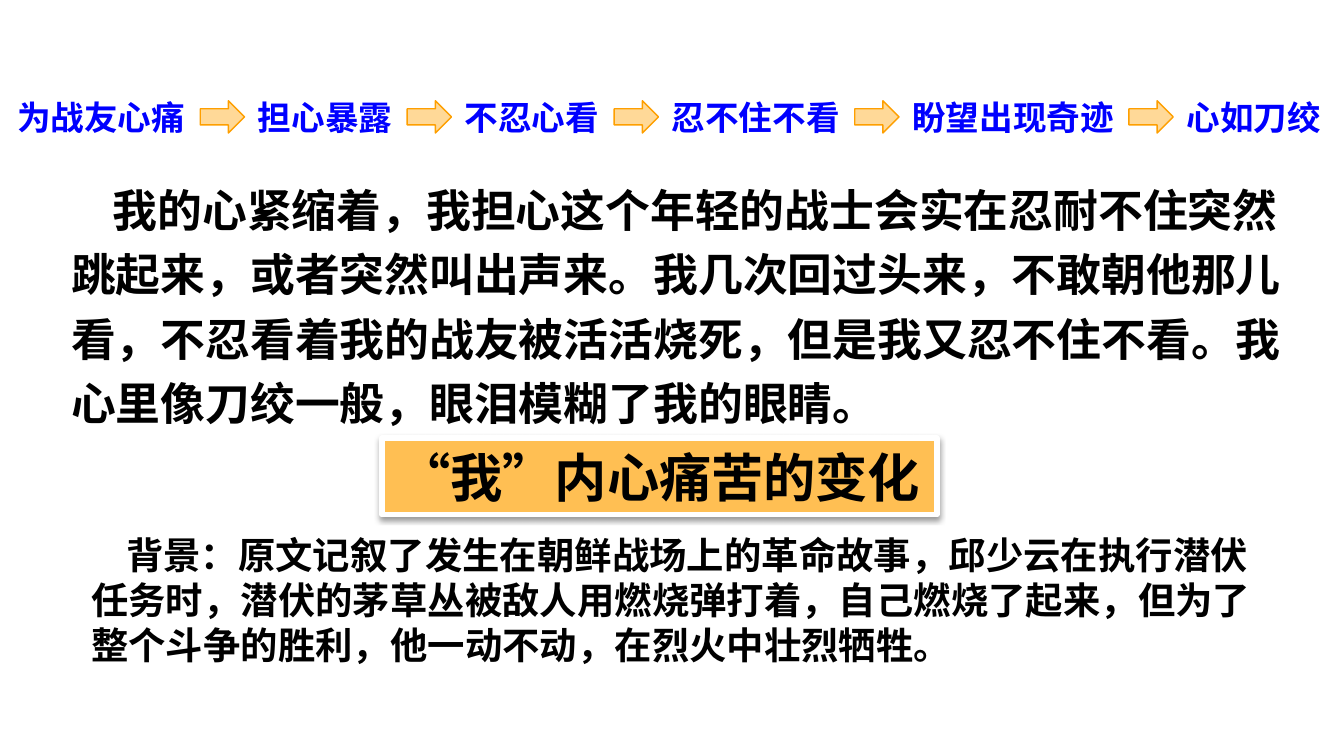
from lxml.etree import SubElement
from pptx import Presentation
from pptx.dml.color import RGBColor
from pptx.enum.lang import MSO_LANGUAGE_ID as Language
from pptx.enum.shapes import MSO_SHAPE as Shape
from pptx.enum.text import MSO_ANCHOR as Anchor, MSO_AUTO_SIZE as AutoSize, PP_ALIGN as Align
from pptx.oxml.ns import qn
from pptx.util import Inches, Pt

FONT = "Noto Sans CJK SC"
BLACK, BLUE, WHITE = "000000", "0000FF", "FFFFFF"
ARROW_FILL, ARROW_LINE, BANNER_FILL = "FFD998", "FE9F00", "FFBF53"

STAGES = ["为战友心痛", "担心暴露", "不忍心看", "忍不住不看", "盼望出现奇迹", "心如刀绞"]
BANNER = "“我”内心痛苦的变化"
PASSAGE = (
    "我的心紧缩着，我担心这个年轻的战士会实在忍耐不住突然跳起来，或者突然叫出声来。"
    "我几次回过头来，不敢朝他那儿看，不忍看着我的战友被活活烧死，但是我又忍不住不看。"
    "我心里像刀绞一般，眼泪模糊了我的眼睛。"
)
BACKGROUND = (
    "背景：原文记叙了发生在朝鲜战场上的革命故事，邱少云在执行潜伏任务时，"
    "潜伏的茅草丛被敌人用燃烧弹打着，自己燃烧了起来，但为了整个斗争的胜利，"
    "他一动不动，在烈火中壮烈牺牲。"
)


def color(value):
    return RGBColor.from_string(value)


def inches(*lengths):
    return [Inches(length) for length in lengths]


def paint(shape, fill, line=None, width=0.75):
    shape.fill.solid()
    shape.fill.fore_color.rgb = color(fill)
    if line:
        shape.line.color.rgb = color(line)
        shape.line.width = Pt(width)
    else:
        shape.line.fill.background()


def write(shape, text, size, ink=BLACK, wrap=True, align=Align.LEFT, anchor=Anchor.TOP,
          fit=AutoSize.SHAPE_TO_FIT_TEXT, indent=0, spacing=1.0):
    frame = shape.text_frame
    frame_format = {"word_wrap": wrap, "auto_size": fit, "vertical_anchor": anchor}
    for name, value in frame_format.items():
        setattr(frame, name, value)
    para = frame.paragraphs[0]
    para.alignment = align
    para.line_spacing = spacing
    if indent:
        para._p.get_or_add_pPr().set("indent", str(Inches(indent)))
    span = para.add_run()
    span.text = text
    font_format = {
        "name": FONT, "size": Pt(size), "bold": True,
        "language_id": Language.SIMPLIFIED_CHINESE,
    }
    for name, value in font_format.items():
        setattr(span.font, name, value)
    span.font.color.rgb = color(ink)
    SubElement(span._r.get_or_add_rPr(), qn("a:ea"), typeface=FONT)


def add_soft_shadow(shape):
    effects = SubElement(shape._element.spPr, qn("a:effectLst"))
    shadow = SubElement(effects, qn("a:outerShdw"), blurRad=str(Pt(3.1)),
                        dist=str(Pt(1.6)), dir="5400000", rotWithShape="0")
    tint = SubElement(shadow, qn("a:srgbClr"), val=BLACK)
    SubElement(tint, qn("a:alpha"), val="38000")


def add_stages(page, left, top, height):
    """Place the labels in a row, with an arrow filling each gap."""
    arrow_width, arrow_height = 0.33, 0.24
    for index, stage in enumerate(STAGES):
        if index:
            arrow = page.shapes.add_shape(Shape.RIGHT_ARROW, *inches(
                left, top + (height - arrow_height) / 2, arrow_width, arrow_height))
            arrow.shadow.inherit = False
            paint(arrow, ARROW_FILL, ARROW_LINE)
            left += arrow_width
        # Each 18 pt character is a quarter inch wide, plus the insets
        width = 0.21 + 0.25 * len(stage)
        box = page.shapes.add_textbox(*inches(left, top, width, height))
        write(box, stage, 18, BLUE, wrap=False)
        left += width


def add_passage(page, left, top, width, height):
    box = page.shapes.add_textbox(*inches(left, top, width, height))
    write(box, PASSAGE, 24, indent=0.31, spacing=1.2)


def add_background(page, left, top, width, height):
    box = page.shapes.add_shape(Shape.RECTANGLE, *inches(left, top, width, height))
    box.shadow.inherit = False
    paint(box, WHITE)
    write(box, BACKGROUND, 20, indent=0.26)


def format_title(page, left, top, width, height):
    title = page.shapes.title
    title.left, title.top, title.width, title.height = inches(left, top, width, height)
    paint(title, BANNER_FILL, WHITE, 3)
    add_soft_shadow(title)
    write(title, BANNER, 28, wrap=False, align=Align.CENTER, anchor=Anchor.MIDDLE,
          fit=AutoSize.NONE)


def main():
    deck = Presentation()
    # Widescreen page, 16 to 9
    deck.slide_width, deck.slide_height = inches(10, 10 * 9 / 16)
    page = deck.slides.add_slide(deck.slide_layouts.get_by_name("Title Only"))

    add_passage(page, 0.43, 1.23, 9.31, 2.04)
    add_stages(page, 0.03, 0.67, 0.4)
    add_background(page, 0.58, 3.91, 9.06, 1.11)
    format_title(page, 2.84, 3.26, 4.13, 0.57)
    deck.save("out.pptx")


if __name__ == "__main__":
    main()
